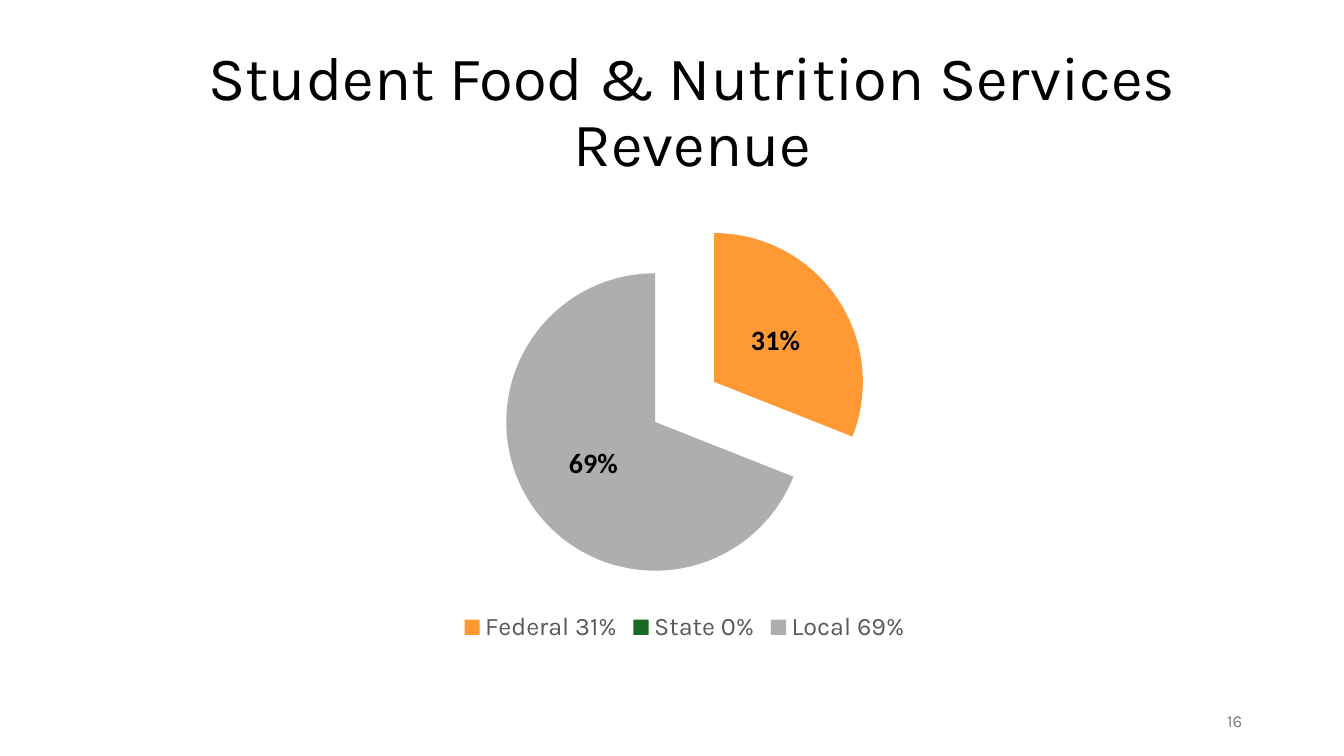
from lxml import etree
from pptx import Presentation
from pptx.chart.data import CategoryChartData as Data
from pptx.dml.color import RGBColor as RGB
from pptx.enum.chart import XL_CHART_TYPE as Kind, XL_LABEL_POSITION as Spot, XL_LEGEND_POSITION as Side
from pptx.enum.text import MSO_ANCHOR as Anchor, PP_ALIGN as Align
from pptx.oxml.ns import qn
from pptx.util import Pt

PX = 9144
FONT = "Karla"
HUES = {"ink": "000000", "key": "595959", "page": "797979",
        "federal": "FF9933", "state": "196B24", "local": "AEAEAE"}


class Deck:
    """Hold the style and the current slide, and draw each kind of element."""

    def __init__(self, wide, high):
        self.prs = Presentation()
        self.prs.slide_width, self.prs.slide_height = wide * PX, high * PX
        self.slide = self.prs.slides.add_slide(self.prs.slide_layouts[5])

    def style(self, font, size, hue, face=FONT, bold=False):
        font.name, font.size, font.bold = face, Pt(size), bold
        font.color.rgb = RGB.from_string(HUES[hue])

    def label(self, frame, text, size, hue, align):
        frame.word_wrap = True
        frame.vertical_anchor = Anchor.MIDDLE
        frame.text = text
        para = frame.paragraphs[0]
        para.alignment = align
        self.style(para.runs[0].font, size, hue)
        return para

    def title(self, text, box):
        shape = self.slide.shapes.title
        shape.left, shape.top, shape.width, shape.height = [n * PX for n in box]
        para = self.label(shape.text_frame, text, 44, "ink", Align.CENTER)
        para.line_spacing = 0.9

    def text(self, text, box, size, hue, align):
        shape = self.slide.shapes.add_textbox(*[n * PX for n in box])
        self.label(shape.text_frame, text, size, hue, align)

    def pie(self, parts, box, burst):
        data = Data()
        data.categories = [f"{name} {share}%" for name, share in parts]
        data.add_series("Series 1", [share for _, share in parts])
        frame = self.slide.shapes.add_chart(Kind.PIE, *[n * PX for n in box], data)
        chart = frame.chart
        chart.has_title = False
        self.style(chart.font, 10, "ink")
        chart.has_legend = True
        chart.legend.position = Side.BOTTOM
        chart.legend.include_in_layout = False
        self.style(chart.legend.font, 18, "key")

        plot = chart.plots[0]
        plot.vary_by_categories = True
        series = plot.series[0]
        gap = etree.Element(qn("c:explosion"), val=str(burst))
        series._element.find(qn("c:tx")).addnext(gap)
        for i, (name, _) in enumerate(parts):
            fill = series.points[i].format.fill
            fill.solid()
            fill.fore_color.rgb = RGB.from_string(HUES[name.lower()])

        labels = series.data_labels
        labels.show_percentage, labels.show_value = True, False
        labels.number_format, labels.number_format_is_linked = "0%", False
        labels.position = Spot.CENTER
        self.style(labels.font, 20, "ink", "Calibri", True)


def main():
    deck = Deck(1333, 750)
    deck.title("Student Food & Nutrition Services Revenue", (132, 40, 1110, 145))
    shares = [("Federal", 31), ("State", 0), ("Local", 69)]
    deck.pie(shares, (120, 202, 1118, 440), 24)
    deck.text("16", (942, 695, 300, 40), 12, "page", Align.RIGHT)
    deck.prs.save("out.pptx")


if __name__ == "__main__":
    main()
